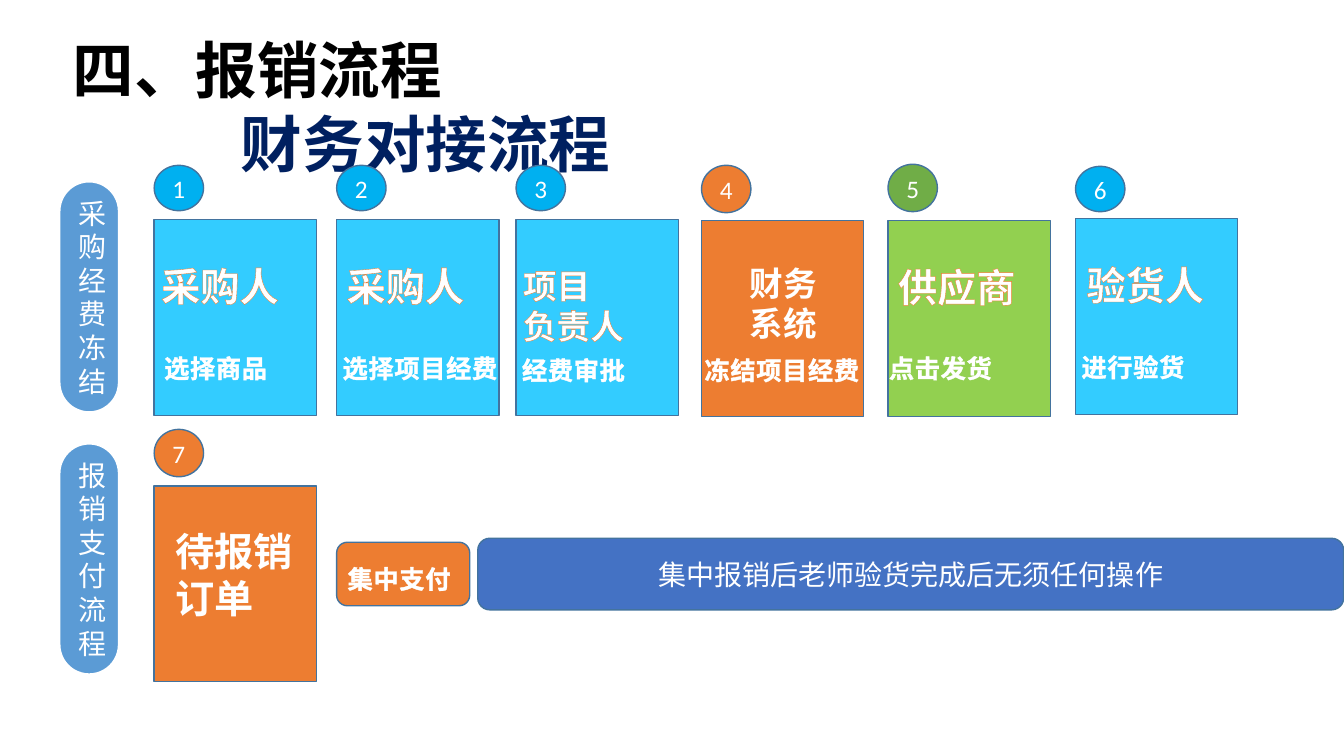
from dataclasses import dataclass
from lxml import etree
from pptx import Presentation, util as u
from pptx.dml.color import RGBColor
from pptx.enum import shapes, text
from pptx.oxml import ns


@dataclass(frozen=True)
class Theme:
    black: str = "000000"
    navy: str = "002060"
    white: str = "FFFFFF"
    edge: str = "43739E"
    cyan: str = "33CCFF"
    sky: str = "00B0F0"
    orange: str = "ED7D31"
    lime: str = "92D050"
    green: str = "70AD47"
    steel: str = "5B9BD5"
    blue: str = "4472C4"
    latin: str = "Calibri"
    cjk: str = "Noto Sans CJK SC"
    title: int = 44
    role: int = 28
    role_small: int = 24
    label: int = 20
    note: int = 18


class Deck:
    """Style and current slide; lengths are cells of a 133.33 by 75 grid."""
    cols, rows = 133.33, 75

    def __init__(self, theme):
        self.t = theme
        self.prs = Presentation()
        self.prs.slide_width, self.prs.slide_height = u.Inches(13.33), u.Inches(7.5)
        self.s = self.prs.slides.add_slide(self.prs.slide_layouts[5])

    def box(self, x, y, w, h):
        cw, rh = self.prs.slide_width / self.cols, self.prs.slide_height / self.rows
        return [round(v) for v in (x * cw, y * rh, w * cw, h * rh)]

    def set_text(self, p, words, size, color, face, bold=False, outline=None, spacing=0):
        p.text = words
        f = p.font
        f.size, f.name, f.bold = u.Pt(size), face, bold
        f.color.rgb = RGBColor.from_string(color)
        rpr = p._p.pPr.find(ns.qn("a:defRPr"))
        if spacing:
            rpr.set("spc", str(spacing))
        if outline:
            line_color, width = outline
            ln = etree.Element(ns.qn("a:ln"), w=str(u.Pt(width)))
            fill = etree.SubElement(ln, ns.qn("a:solidFill"))
            etree.SubElement(fill, ns.qn("a:srgbClr"), val=line_color)
            rpr.insert(0, ln)

    def title(self, lines, at):
        sp = self.s.shapes.title
        sp.left, sp.top, sp.width, sp.height = self.box(*at)
        tf = sp.text_frame
        tf.vertical_anchor, tf.auto_size = text.MSO_ANCHOR.TOP, text.MSO_AUTO_SIZE.NONE
        for i, (words, color, indent) in enumerate(lines):
            p = tf.paragraphs[0] if i == 0 else tf.add_paragraph()
            p.alignment, p.line_spacing = text.PP_ALIGN.LEFT, u.Pt(53)
            p._p.get_or_add_pPr().set("marL", str(u.Inches(indent)))
            self.set_text(p, words, self.t.title, color, self.t.cjk, bold=True)

    def shape(self, kind, at, fill, words="", size=18, face=None, line=None, width=1):
        sp = self.s.shapes.add_shape(kind, *self.box(*at))
        sp.shadow.inherit = False
        sp.fill.solid()
        sp.fill.fore_color.rgb = RGBColor.from_string(fill)
        sp.line.color.rgb = RGBColor.from_string(line or self.t.edge)
        sp.line.width = u.Pt(width)
        if words:
            tf = sp.text_frame
            tf.word_wrap, tf.vertical_anchor = True, text.MSO_ANCHOR.MIDDLE
            p = tf.paragraphs[0]
            p.alignment = text.PP_ALIGN.CENTER
            self.set_text(p, words, size, self.t.white, face or self.t.latin)
        return sp

    def card(self, x, y, fill):
        self.shape(shapes.MSO_SHAPE.RECTANGLE, (x, y, 16.1, 19.4), fill)

    def badge(self, number, x, y, h, fill):
        self.shape(shapes.MSO_SHAPE.FLOWCHART_CONNECTOR, (x, y, 4.9, h), fill,
                   str(number), self.t.note)

    def stage(self, words, y):
        sp = self.shape(shapes.MSO_SHAPE.ROUNDED_RECTANGLE, (5.9, y, 5.9, 22.9), self.t.steel,
                        words, self.t.label, self.t.cjk, self.t.white, 1.5)
        sp.adjustments[0] = 0.5

    def words(self, lines, at, size, **style):
        tf = self.s.shapes.add_textbox(*self.box(*at)).text_frame
        tf.word_wrap = True
        for i, words in enumerate(lines):
            p = tf.paragraphs[0] if i == 0 else tf.add_paragraph()
            self.set_text(p, words, size, self.t.white, self.t.latin, bold=True, **style)

    def note(self, words, x, y):
        self.words([words], (x, y, 18.6, 4), self.t.note,
                   outline=(self.t.white, 0.75), spacing=50)


def main():
    t = Theme()
    d = Deck(t)
    edged = {"outline": (t.orange, 0.52)}

    # Heading
    d.title([("四、报销流程", t.black, 0), ("财务对接流程", t.navy, 1.67)], (6.2, 2.6, 98, 15.8))

    # Stage labels
    d.stage("采购经费冻结", 18)
    d.stage("报销支付流程", 44)

    # Steps: card x, y, fill; badge y, height, fill; role lines, place, size, style; note, x, y
    role, small = t.role, t.role_small
    steps = [
        (15.3, 21.8, t.cyan, 16.4, 4.5, t.sky,
         ["采购人"], (15, 25.5, 14.1, 5.7), role, edged, "选择商品", 15.3, 34.5),
        (33.4, 21.8, t.cyan, 16.4, 4.5, t.sky,
         ["采购人"], (33.4, 25.5, 14.1, 5.7), role, edged, "选择项目经费", 33, 34.5),
        (51.2, 21.8, t.cyan, 16.4, 4.5, t.sky,
         ["项目", "负责人"], (50.9, 25.8, 20.4, 9.1), small, edged, "经费审批", 50.8, 34.7),
        (69.6, 21.9, t.orange, 16.4, 4.7, t.orange,
         ["财务系统"], (73.4, 25.6, 10.3, 8), small, {}, "冻结项目经费", 68.9, 34.7),
        (88.1, 21.9, t.lime, 16.3, 4.7, t.green,
         ["供应商"], (88.1, 25.6, 14.1, 5.7), role, edged, "点击发货", 87.2, 34.5),
        (106.7, 21.7, t.cyan, 16.5, 4.5, t.sky,
         ["验货人"], (106.8, 25.4, 14.1, 5.7), role, edged, "进行验货", 106.3, 34.4),
        (15.3, 48.2, t.orange, 42.6, 4.7, t.orange,
         ["待报销订单"], (16.4, 51.8, 14.1, 10.4), role, {}, None, 0, 0),
    ]
    for n, (x, y, fill, by, bh, bfill, who, at, size, style, note, nx, ny) in enumerate(steps, 1):
        d.card(x, y, fill)
        d.badge(n, x, by, bh, bfill)
        d.words(who, at, size, **style)
        if note:
            d.note(note, nx, ny)

    # Central payment
    rounded = shapes.MSO_SHAPE.ROUNDED_RECTANGLE
    d.shape(rounded, (33.4, 53.8, 13.2, 6.3), t.orange)
    d.note("集中支付", 33.5, 55.4)
    d.shape(rounded, (47.4, 53.4, 85.9, 7.1), t.blue,
            "集中报销后老师验货完成后无须任何操作", t.label)

    d.prs.save("out.pptx")


if __name__ == "__main__":
    main()
